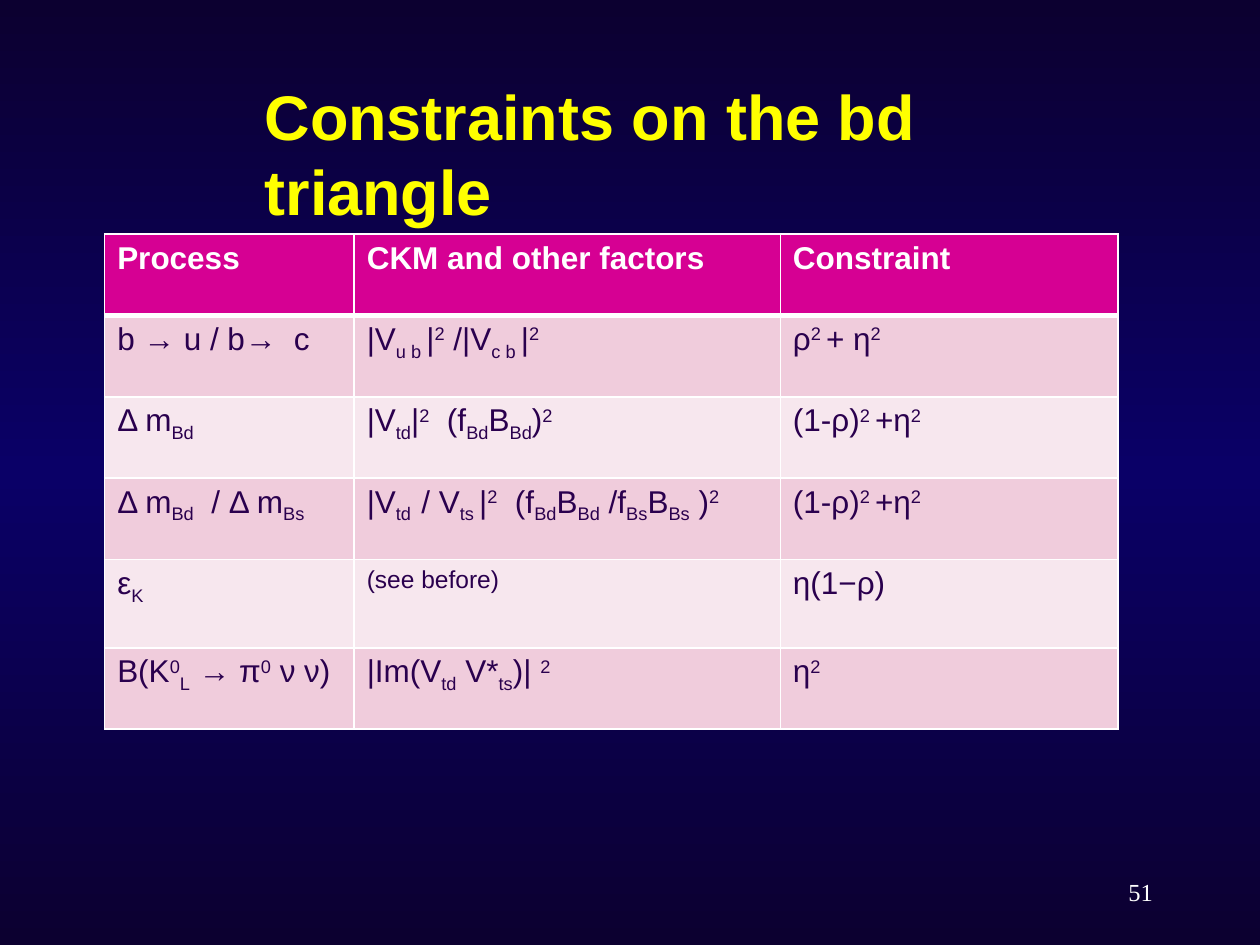
from copy import deepcopy
from dataclasses import dataclass

from pptx import Presentation
from pptx.dml.color import RGBColor
from pptx.enum.text import MSO_ANCHOR, PP_ALIGN
from pptx.oxml.ns import qn
from pptx.util import Cm, Pt
from lxml.etree import SubElement

TITLE = "Constraints on the bd triangle"
PAGE_NUMBER = "51"
HEADER = ["Process", "CKM and other factors", "Constraint"]
ROWS = [
    ["b → u / b→  c", "|V_{u b }|^{2} /|V_{c b }|^{2}", "ρ^{2 }+ η^{2}"],
    ["Δ m_{Bd}", "|V_{td}|^{2}  (f_{Bd}B_{Bd})^{2}", "(1-ρ)^{2 }+η^{2}"],
    ["Δ m_{Bd}  / Δ m_{Bs}",
     "|V_{td  }/ V_{ts }|^{2}  (f_{Bd}B_{Bd} /f_{Bs}B_{Bs} )^{2}",
     "(1-ρ)^{2 }+η^{2}"],
    ["ε_{K}", "(see before)", "η(1−ρ)"],
    ["B(K^{0}_{L} → π^{0} ν ν)", "|Im(V_{td} V*_{ts})| ^{2}", "η^{2}"],
]
SMALL_CELLS = {"(see before)"}
COLUMN_WIDTHS = [5.03, 8.59, 6.81]
ROW_HEIGHTS = [1.64, 1.64, 1.64, 1.64, 1.78, 1.64]
SHIFTS = {"_": "-25000", "^": "30000"}


@dataclass(frozen=True)
class Theme:
    font: str = "Arial"
    number_font: str = "Times New Roman"
    title_size: int = 36
    cell_size: int = 18
    small_size: int = 14
    title: str = "FFFF00"
    light: str = "FFFFFF"
    ink: str = "2A004E"
    header: str = "D60093"
    bands: tuple = ("F0CCDC", "F7E7EE")
    background: tuple = ((0, "0C0030"), (0.5, "0A0067"), (1, "0C0030"))
    thin: int = 1
    thick: int = 3


THEME = Theme()


def split_scripts(text):
    for piece in text.split("}"):
        base, brace, script = piece.partition("{")
        if brace:
            yield base[:-1], None
            yield script, SHIFTS[base[-1]]
        else:
            yield base, None


def write(frame, text, *, size, color, font=THEME.font, bold=False,
          align=PP_ALIGN.LEFT):
    para = frame.paragraphs[0]
    para.alignment = align
    for part, shift in split_scripts(text):
        if not part:
            continue
        span = para.add_run()
        span.text = part
        span.font.name = font
        span.font.size = Pt(size)
        span.font.bold = bold
        span.font.color.rgb = RGBColor.from_string(color)
        if shift:
            span.font._element.set("baseline", shift)


def set_background(page):
    fill = page.background.fill
    fill.gradient()
    fill.gradient_angle = 90
    stop_list = page._element.find(".//" + qn("a:gsLst"))
    stop_list.append(deepcopy(stop_list[0]))
    for stop, (position, color) in zip(fill.gradient_stops, THEME.background):
        stop.position = position
        stop.color.rgb = RGBColor.from_string(color)


def set_borders(cell, **widths):
    properties = cell._tc.get_or_add_tcPr()
    for side in "LRTB":
        width = widths.get(side, THEME.thin)
        line = SubElement(properties, qn(f"a:ln{side}"), w=str(Pt(width)))
        fill = SubElement(line, qn("a:solidFill"))
        SubElement(fill, qn("a:srgbClr"), val=THEME.light)


def add_title(page):
    box = page.shapes.title
    box.left, box.top, box.width, box.height = Cm(5.08), Cm(1.3), Cm(18.42), Cm(3.56)
    box.text_frame.word_wrap = True
    box.text_frame.vertical_anchor = MSO_ANCHOR.MIDDLE
    write(box.text_frame, TITLE, size=THEME.title_size, color=THEME.title, bold=True)


def add_constraints(page):
    content = [HEADER] + ROWS
    table = page.shapes.add_table(
        len(content), len(HEADER), Cm(2.11), Cm(4.72),
        Cm(sum(COLUMN_WIDTHS)), Cm(sum(ROW_HEIGHTS))).table
    for column, width in zip(table.columns, COLUMN_WIDTHS):
        column.width = Cm(width)
    for index, (row, height, texts) in enumerate(zip(table.rows, ROW_HEIGHTS, content)):
        row.height = Cm(height)
        heading = index == 0
        fill = THEME.header if heading else THEME.bands[(index - 1) % 2]
        edges = {0: {"B": THEME.thick}, 1: {"T": THEME.thick}}.get(index, {})
        for cell, text in zip(row.cells, texts):
            set_borders(cell, **edges)
            cell.fill.solid()
            cell.fill.fore_color.rgb = RGBColor.from_string(fill)
            write(cell.text_frame, text, bold=heading,
                  size=THEME.small_size if text in SMALL_CELLS else THEME.cell_size,
                  color=THEME.light if heading else THEME.ink)


def add_page_number(page):
    box = page.shapes.add_textbox(Cm(18.21), Cm(17.35), Cm(5.28), Cm(1.27))
    box.text_frame.word_wrap = True
    box.text_frame.vertical_anchor = MSO_ANCHOR.MIDDLE
    write(box.text_frame, PAGE_NUMBER, size=THEME.small_size, color=THEME.light,
          font=THEME.number_font, align=PP_ALIGN.RIGHT)


def main():
    deck = Presentation()
    deck.slide_width, deck.slide_height = Cm(25.4), Cm(19.05)
    page = deck.slides.add_slide(deck.slide_layouts[5])
    set_background(page)
    add_title(page)
    add_constraints(page)
    add_page_number(page)
    deck.save("out.pptx")


if __name__ == "__main__":
    main()
